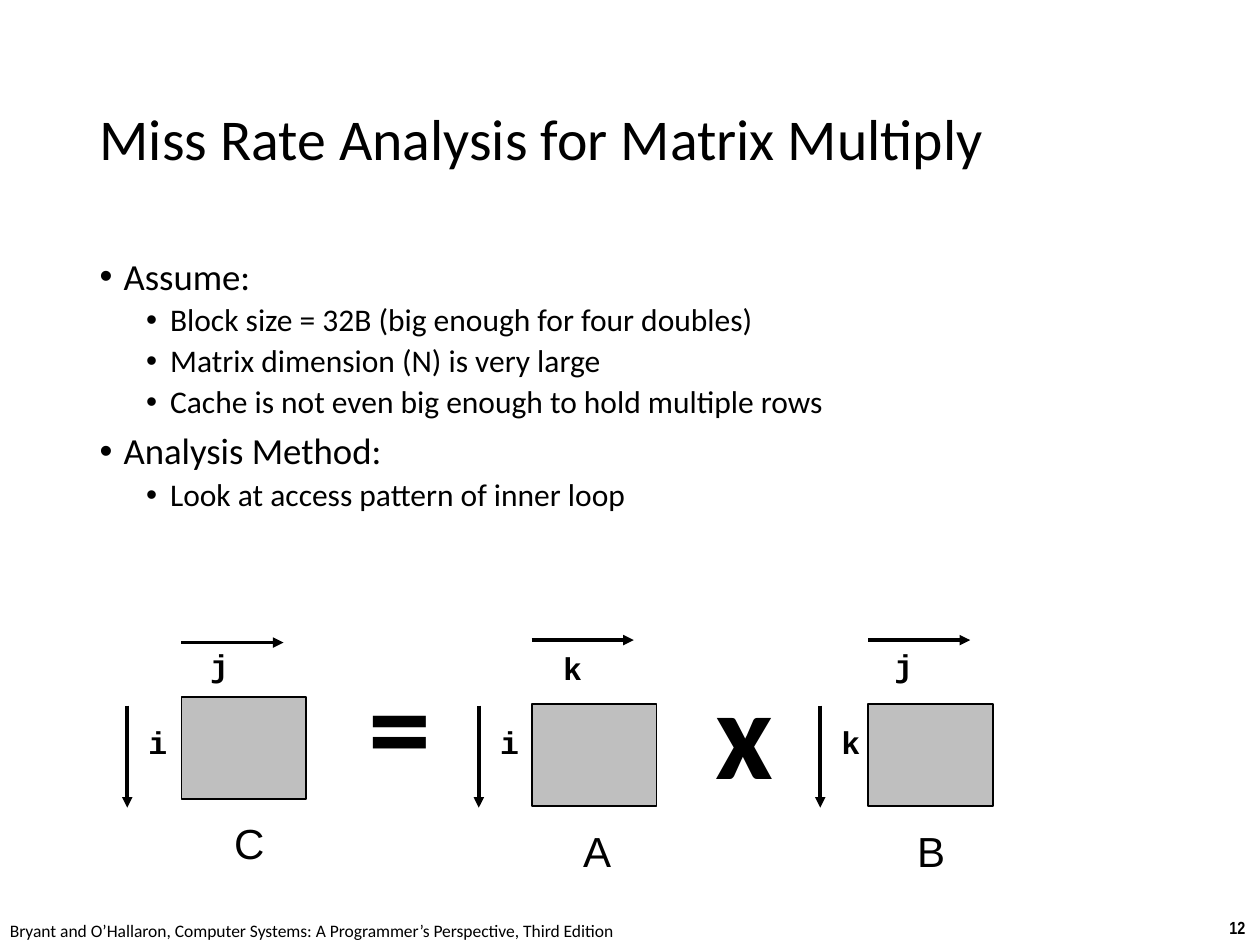
from dataclasses import dataclass
from typing import Any

import lxml.etree
import pptx
import pptx.dml.color
import pptx.enum.shapes
import pptx.enum.text
import pptx.oxml.ns
import pptx.util

Inches = pptx.util.Inches
Pt = pptx.util.Pt
Align = pptx.enum.text.PP_ALIGN
Anchor = pptx.enum.text.MSO_ANCHOR
Kind = pptx.enum.shapes.MSO_SHAPE
qn = pptx.oxml.ns.qn

BLACK = pptx.dml.color.RGBColor(0x00, 0x00, 0x00)
WHITE = pptx.dml.color.RGBColor(0xFF, 0xFF, 0xFF)
GRAY = pptx.dml.color.RGBColor(0xBF, 0xBF, 0xBF)

# Font formats
TITLE = {"name": "Calibri", "size": Pt(33), "bold": False}
SIGN = {"name": "Calibri", "size": Pt(72), "bold": True}
NAME = {"name": "Arial", "size": Pt(24), "bold": False}
INDEX = {"name": "Courier New", "size": Pt(18), "bold": True}
SOURCE = {"name": "Calibri", "size": Pt(10), "bold": False}
NUMBER = {"name": "Arial Narrow", "size": Pt(10), "bold": True}

# Bullet formats by level: font, space before, left margin in inches
LEVELS = [
    ({"name": "Calibri", "size": Pt(21)}, Pt(7.5), 0.19),
    ({"name": "Calibri", "size": Pt(18)}, Pt(3.8), 0.56),
]
ITEMS = [
    (0, "Assume:"),
    (1, "Block size = 32B (big enough for four doubles)"),
    (1, "Matrix dimension (N) is very large"),
    (1, "Cache is not even big enough to hold multiple rows"),
    (0, "Analysis Method:"),
    (1, "Look at access pattern of inner loop"),
]

WIDTH, HEIGHT, REACH = 0.99, 0.81, 0.81  # matrix size and arrow length


@dataclass
class Matrix:
    name: str
    row: str
    col: str
    left: float
    top: float
    side: float    # x of the row arrow
    over: float    # y of the column arrow
    col_x: float   # column label
    col_y: float
    name_x: float


MATRICES = [
    Matrix("A", "i", "k", 4.22, 5.59, 3.80, 5.08, 4.37, 5.10, 4.53),
    Matrix("B", "k", "j", 6.89, 5.59, 6.51, 5.08, 7.00, 5.08, 7.18),
    Matrix("C", "i", "j", 1.44, 5.53, 1.01, 5.10, 1.57, 5.08, 1.76),
]


def style(target: Any, values: dict) -> None:
    for key, value in values.items():
        setattr(target, key, value)


def write(shape: Any, text: str, form: dict, wrap: bool = False) -> None:
    frame = shape.text_frame
    style(frame, {"word_wrap": wrap, "vertical_anchor": Anchor.TOP})
    par = frame.paragraphs[0]
    par.alignment = Align.LEFT
    run = par.add_run()
    run.text = text
    style(run.font, form)
    run.font.color.rgb = BLACK


def add_text(shapes: Any, text: str, form: dict, x: float, y: float,
             w: float, h: float, wrap: bool = False) -> None:
    box = shapes.add_textbox(Inches(x), Inches(y), Inches(w), Inches(h))
    write(box, text, form, wrap)


def add_rect(shapes: Any, x: float, y: float, w: float, h: float,
             fill: Any) -> Any:
    rect = shapes.add_shape(Kind.RECTANGLE, Inches(x), Inches(y),
                            Inches(w), Inches(h))
    rect.shadow.inherit = False
    rect.fill.solid()
    rect.fill.fore_color.rgb = fill
    return rect


def add_label(shapes: Any, text: str, x: float, y: float) -> None:
    label = add_rect(shapes, x, y, 0.35, 0.4, WHITE)
    label.line.fill.background()
    write(label, text, INDEX)


def add_arrow(shapes: Any, x: float, y: float, dx: float, dy: float) -> None:
    arrow = shapes.add_connector(
        pptx.enum.shapes.MSO_CONNECTOR.STRAIGHT,
        Inches(x), Inches(y), Inches(x + dx), Inches(y + dy))
    arrow.line.color.rgb = BLACK
    arrow.line.width = Pt(2)
    line = arrow.line._get_or_add_ln()
    lxml.etree.SubElement(line, qn("a:tailEnd"), type="triangle")
    lxml.etree.SubElement(arrow._element.spPr, qn("a:effectLst"))


def add_matrix(slide: Any, mat: Matrix) -> None:
    shapes = slide.shapes.add_group_shape().shapes
    add_text(shapes, mat.name, NAME, mat.name_x, mat.top + 0.91, 0.44, 0.5)
    add_label(shapes, mat.row, mat.side + 0.07, 5.69)
    add_label(shapes, mat.col, mat.col_x, mat.col_y)
    box = add_rect(shapes, mat.left, mat.top, WIDTH, HEIGHT, GRAY)
    box.line.color.rgb = BLACK
    box.line.width = Pt(1)
    add_arrow(shapes, mat.left, mat.over, REACH, 0)
    add_arrow(shapes, mat.side, 5.6, 0, REACH)


def place(shape: Any, x: float, y: float, w: float, h: float) -> None:
    style(shape, {"left": Inches(x), "top": Inches(y),
                  "width": Inches(w), "height": Inches(h)})
    shape.text_frame.auto_size = pptx.enum.text.MSO_AUTO_SIZE.NONE


def fill_list(body: Any) -> None:
    frame = body.text_frame
    for num, (level, text) in enumerate(ITEMS):
        par = frame.paragraphs[0] if num == 0 else frame.add_paragraph()
        font, before, margin = LEVELS[level]
        style(par, {"level": level, "line_spacing": 0.9,
                    "space_before": before})
        run = par.add_run()
        run.text = text
        style(run.font, font)
        run.font.color.rgb = BLACK
        props = par._p.get_or_add_pPr()
        props.set("marL", str(Inches(margin)))
        props.set("indent", str(Inches(-0.19)))
        lxml.etree.SubElement(props, qn("a:buFont"), typeface="Arial")
        lxml.etree.SubElement(props, qn("a:buChar"), char="•")


def main() -> None:
    deck = pptx.Presentation()
    style(deck, {"slide_width": Inches(10), "slide_height": Inches(7.5)})
    slide = deck.slides.add_slide(deck.slide_layouts[1])

    # Title and list
    title, body = slide.placeholders
    place(title, 0.69, 0.4, 8.62, 1.45)
    write(title, "Miss Rate Analysis for Matrix Multiply", TITLE, True)
    title.text_frame.vertical_anchor = Anchor.MIDDLE
    title.text_frame.paragraphs[0].line_spacing = 0.9
    place(body, 0.69, 2, 8.62, 4.76)
    fill_list(body)

    # Matrix equation
    for mat in MATRICES:
        add_matrix(slide, mat)
    add_text(slide.shapes, "=", SIGN, 2.83, 5.08, 0.58, 2.52, True)
    add_text(slide.shapes, "x", SIGN, 5.58, 5.14, 0.58, 2.52, True)

    # Footer
    add_text(slide.shapes, "12", NUMBER, 9.66, 7.23, 0.34, 0.27)
    add_text(slide.shapes, "Bryant and O’Hallaron, Computer Systems: "
             "A Programmer’s Perspective, Third Edition",
             SOURCE, -0.02, 7.25, 5.08, 0.27)

    deck.save("out.pptx")


if __name__ == "__main__":
    main()
